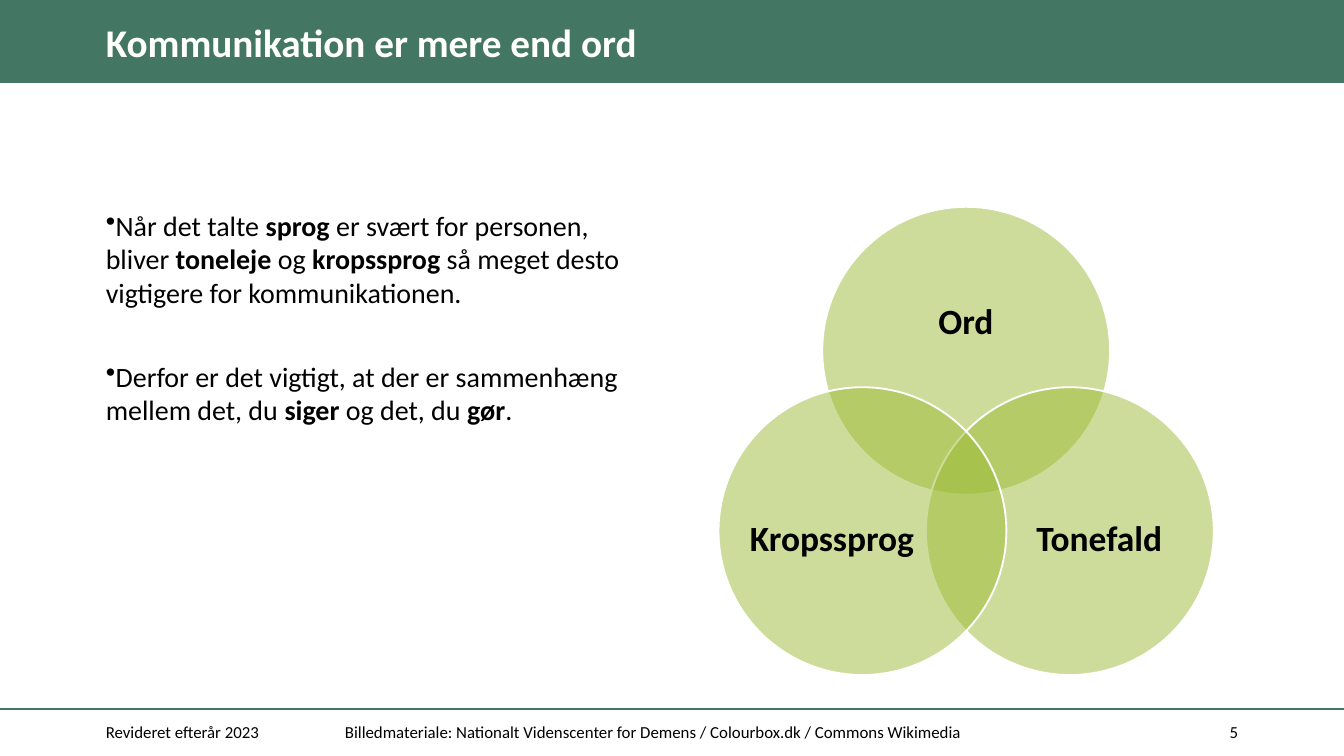
from lxml import etree
from pptx import Presentation
from pptx import util as u
from pptx.dml.color import RGBColor
from pptx.enum import shapes, text
from pptx.oxml.ns import qn

GREEN = RGBColor(0x43, 0x77, 0x63)
LIME = RGBColor(0x9D, 0xBB, 0x36)
WHITE = RGBColor(0xFF, 0xFF, 0xFF)
BLACK = RGBColor(0, 0, 0)
MARGIN = 1.75


def set_font(para, size, color=BLACK, bold=False):
    para.font.name = "Calibri"
    para.font.size = u.Pt(size)
    para.font.color.rgb = color
    para.font.bold = bold


def add_text(left, top, width, height, words, size, align, inset, bold=False):
    box = page.shapes.add_textbox(u.Cm(left), u.Cm(top), u.Cm(width), u.Cm(height))
    frame = box.text_frame
    frame.word_wrap = True
    frame.vertical_anchor = text.MSO_ANCHOR.MIDDLE
    frame.margin_left = frame.margin_right = u.Cm(inset)
    frame.margin_top = frame.margin_bottom = u.Cm(inset / 2)
    para = frame.paragraphs[0]
    para.text = words
    para.alignment = align
    set_font(para, size, bold=bold)
    return para


deck = Presentation()
deck.slide_width, deck.slide_height = u.Cm(25.4), u.Cm(14.29)
page = deck.slides.add_slide(deck.slide_layouts[5])

# Header bar and footer rule
bar = page.shapes.add_shape(shapes.MSO_SHAPE.RECTANGLE, 0, 0, deck.slide_width, u.Cm(1.57))
bar.shadow.inherit = False
bar.fill.solid()
bar.fill.fore_color.rgb = GREEN
bar.line.fill.background()

rule = page.shapes.add_connector(
    shapes.MSO_CONNECTOR.STRAIGHT, 0, u.Cm(13.4), deck.slide_width, u.Cm(13.4))
rule.line.color.rgb = GREEN
rule.line.width = u.Pt(1)
etree.SubElement(rule._element.spPr, qn("a:effectLst"))

# Title, brought in front of the bar
title = page.shapes.title
bar._element.addnext(title._element)
title.left, title.top, title.width, title.height = (
    u.Cm(MARGIN), u.Cm(0.28), u.Cm(18.9), u.Cm(1.12))
frame = title.text_frame
frame.text = "Kommunikation er mere end ord"
frame.vertical_anchor = text.MSO_ANCHOR.MIDDLE
frame.margin_left = u.Cm(0.25)
frame.margin_top = frame.margin_right = frame.margin_bottom = 0
para = frame.paragraphs[0]
para.alignment = text.PP_ALIGN.LEFT
para.line_spacing = 0.9
set_font(para, 21, WHITE, bold=True)

# Body: every second piece is bold
bullets = [
    ["Når det talte ", "sprog", " er svært for personen, bliver ", "toneleje", " og ",
     "kropssprog", " så meget desto vigtigere for kommunikationen."],
    ["Derfor er det vigtigt, at der er sammenhæng mellem det, du ", "siger",
     " og det, du ", "gør", "."],
]
body = page.shapes.add_textbox(u.Cm(MARGIN), u.Cm(3.81), u.Cm(10.8), u.Cm(9.07))
frame = body.text_frame
frame.word_wrap = True
for number, pieces in enumerate(bullets):
    para = frame.add_paragraph() if number else frame.paragraphs[0]
    if number:
        para.space_before = u.Pt(27)
    etree.SubElement(para._p.get_or_add_pPr(), qn("a:buChar"), char="•")
    set_font(para, 15)
    for index, piece in enumerate(pieces):
        span = para.add_run()
        span.text = piece
        span.font.bold = index % 2 == 1

# Footer
for left, width, words, align in [
    (MARGIN, 4.27, "Revideret efterår 2023", text.PP_ALIGN.LEFT),
    (6.27, 16, "Billedmateriale: Nationalt Videnscenter for Demens / Colourbox.dk / "
     "Commons Wikimedia", text.PP_ALIGN.LEFT),
    (22.48, 1.17, "5", text.PP_ALIGN.RIGHT),
]:
    add_text(left, 13.46, width, 0.76, words, 9, align, 0.25)

# Venn diagram: circle position, then label frame
DIAMETER = 5.44
for left, top, words, label in [
    (15.54, 3.91, "Ord", (16.26, 4.88, 3.99, 2.44)),
    (17.5, 7.32, "Tonefald", (19.15, 8.71, 3.25, 3)),
    (13.58, 7.32, "Kropssprog", (14.1, 8.71, 3.25, 3)),
]:
    circle = page.shapes.add_shape(
        shapes.MSO_SHAPE.OVAL, u.Cm(left), u.Cm(top), u.Cm(DIAMETER), u.Cm(DIAMETER))
    circle.shadow.inherit = False
    circle.fill.solid()
    circle.fill.fore_color.rgb = LIME
    color = circle._element.spPr.find(qn("a:solidFill"))[0]
    etree.SubElement(color, qn("a:alpha"), val="50000")
    circle.line.color.rgb = WHITE
    circle.line.width = u.Pt(1)
    para = add_text(*label, words, 19, text.PP_ALIGN.CENTER, 0, bold=True)
    para.line_spacing = 0.9

deck.save("out.pptx")
